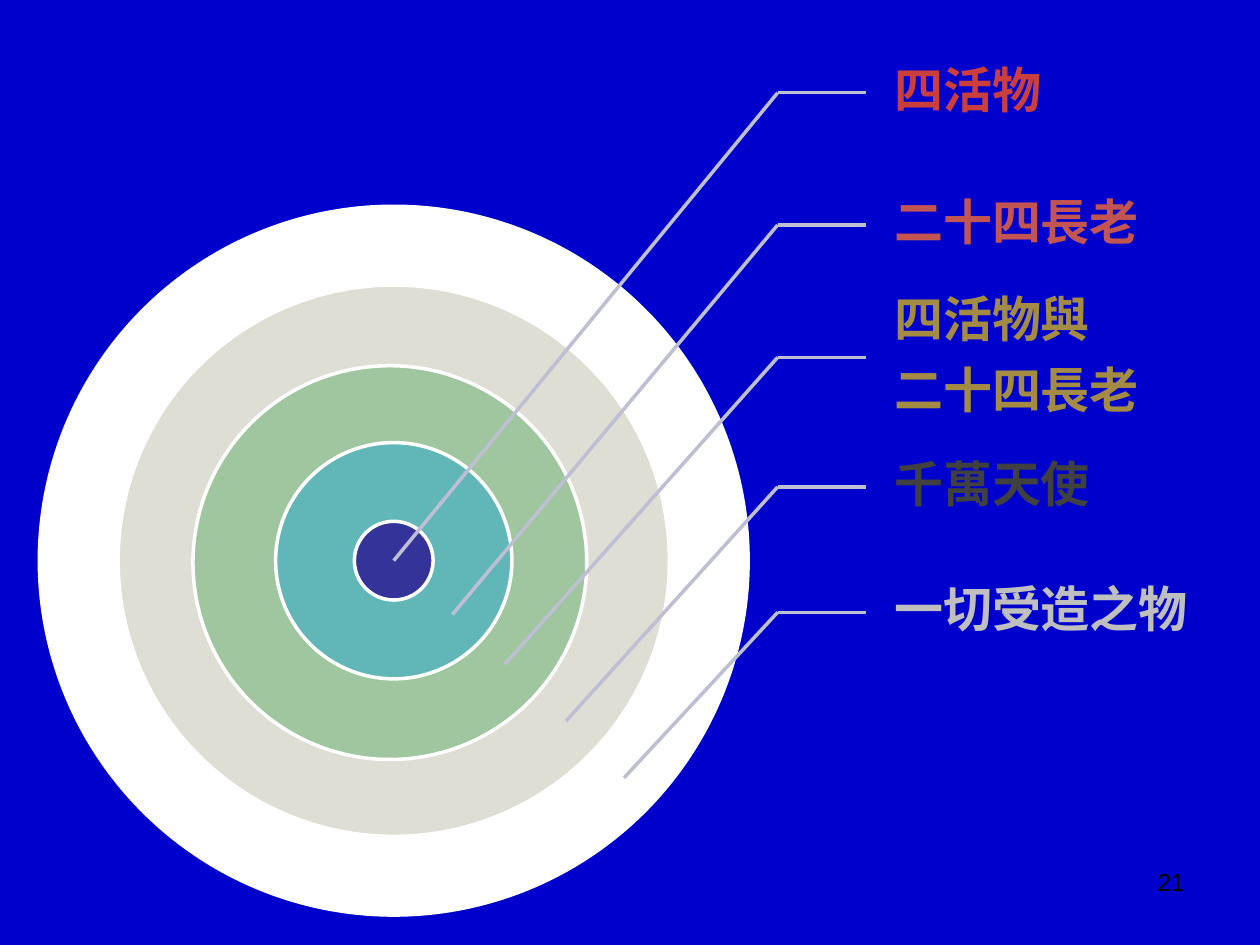
"""Build a slide of five concentric circles with labelled leader lines."""
from lxml import etree
from pptx import Presentation
from pptx.dml.color import RGBColor
from pptx.enum.shapes import MSO_CONNECTOR, MSO_SHAPE
from pptx.enum.text import MSO_ANCHOR, PP_ALIGN
from pptx.oxml.ns import qn
from pptx.util import Pt

OVAL = MSO_SHAPE.OVAL
STRAIGHT = MSO_CONNECTOR.STRAIGHT
TOP, MIDDLE = MSO_ANCHOR.TOP, MSO_ANCHOR.MIDDLE
LEFT, RIGHT = PP_ALIGN.LEFT, PP_ALIGN.RIGHT

BLUE = RGBColor(0x00, 0x00, 0xCC)
WHITE = RGBColor(0xFF, 0xFF, 0xFF)
BLACK = RGBColor(0x00, 0x00, 0x00)
IVORY = RGBColor(0xDE, 0xDE, 0xD4)
GREEN = RGBColor(0x9F, 0xC6, 0x9F)
TEAL = RGBColor(0x61, 0xB7, 0xB7)
INDIGO = RGBColor(0x33, 0x33, 0x99)
LAVENDER = RGBColor(0xBF, 0xBF, 0xD4)
RED = RGBColor(0xCB, 0x3E, 0x3E)
CORAL = RGBColor(0xC2, 0x55, 0x52)
GOLD = RGBColor(0xA4, 0x8B, 0x44)
CHARCOAL = RGBColor(0x40, 0x40, 0x40)
SILVER = RGBColor(0xBF, 0xBF, 0xBF)

deck = Presentation()
deck.slide_width, deck.slide_height = Pt(720), Pt(540)
page = deck.slides.add_slide(deck.slide_layouts[6])
page.background.fill.solid()
page.background.fill.fore_color.rgb = BLUE


def add_text(lines, left, top, width, height, size, color, bold=False,
             align=LEFT, anchor=TOP, insets=(7.2, 3.6, 7.2, 3.6),
             line_spacing=None, after_percent=0):
    box = page.shapes.add_textbox(Pt(left), Pt(top), Pt(width), Pt(height))
    frame = box.text_frame
    frame.word_wrap = True
    frame.vertical_anchor = anchor
    (frame.margin_left, frame.margin_top,
     frame.margin_right, frame.margin_bottom) = map(Pt, insets)
    for index, line in enumerate(lines):
        para = frame.add_paragraph() if index else frame.paragraphs[0]
        para.alignment = align
        para.line_spacing = line_spacing
        if after_percent:
            after = etree.SubElement(para._p.get_or_add_pPr(), qn("a:spcAft"))
            percent = etree.SubElement(after, qn("a:spcPct"))
            percent.set("val", str(after_percent * 1000))
        span = para.add_run()
        span.text = line
        span.font.name = "Arial"
        span.font.size = Pt(size)
        span.font.bold = bold
        span.font.color.rgb = color


def add_line(start, end):
    line = page.shapes.add_connector(STRAIGHT, *map(Pt, (*start, *end)))
    line.line.color.rgb = LAVENDER
    line.line.width = Pt(2)
    etree.SubElement(line._element.spPr, qn("a:effectLst"))


rings = [
    (225, 320.4, 405, WHITE),
    (225, 320.4, 315, IVORY),
    (222.8, 321.5, 225, GREEN),
    (225, 320.4, 135, TEAL),
    (225, 320.4, 45, INDIGO),
]
for center_x, center_y, diameter, color in rings:
    ring = page.shapes.add_shape(
        OVAL, Pt(center_x - diameter / 2), Pt(center_y - diameter / 2),
        Pt(diameter), Pt(diameter))
    ring.shadow.inherit = False
    ring.fill.solid()
    ring.fill.fore_color.rgb = color
    ring.line.color.rgb = WHITE
    ring.line.width = Pt(2)

labels = [
    (["四活物"], RED, 53, (225, 320.4)),
    (["二十四長老"], CORAL, 128.5, (258.5, 351.2)),
    (["四活物與", "二十四長老"], GOLD, 204.2, (288.5, 379.6)),
    (["千萬天使"], CHARCOAL, 278.2, (323.5, 412)),
    (["一切受造之物"], SILVER, 349.9, (356.6, 444.5)),
]
for lines, color, level, target in labels:
    add_text(lines, 495, level - 35.8, 202.5, 71.3, size=28, color=color,
             bold=True, anchor=MIDDLE, insets=(16, 3, 3, 3),
             line_spacing=0.9, after_percent=35)
    elbow = (444.4, level)
    add_line(elbow, (494.8, level))
    add_line(elbow, target)

add_text(["21"], 516, 492, 168, 37.5, size=14, color=BLACK, align=RIGHT)

deck.save("out.pptx")
